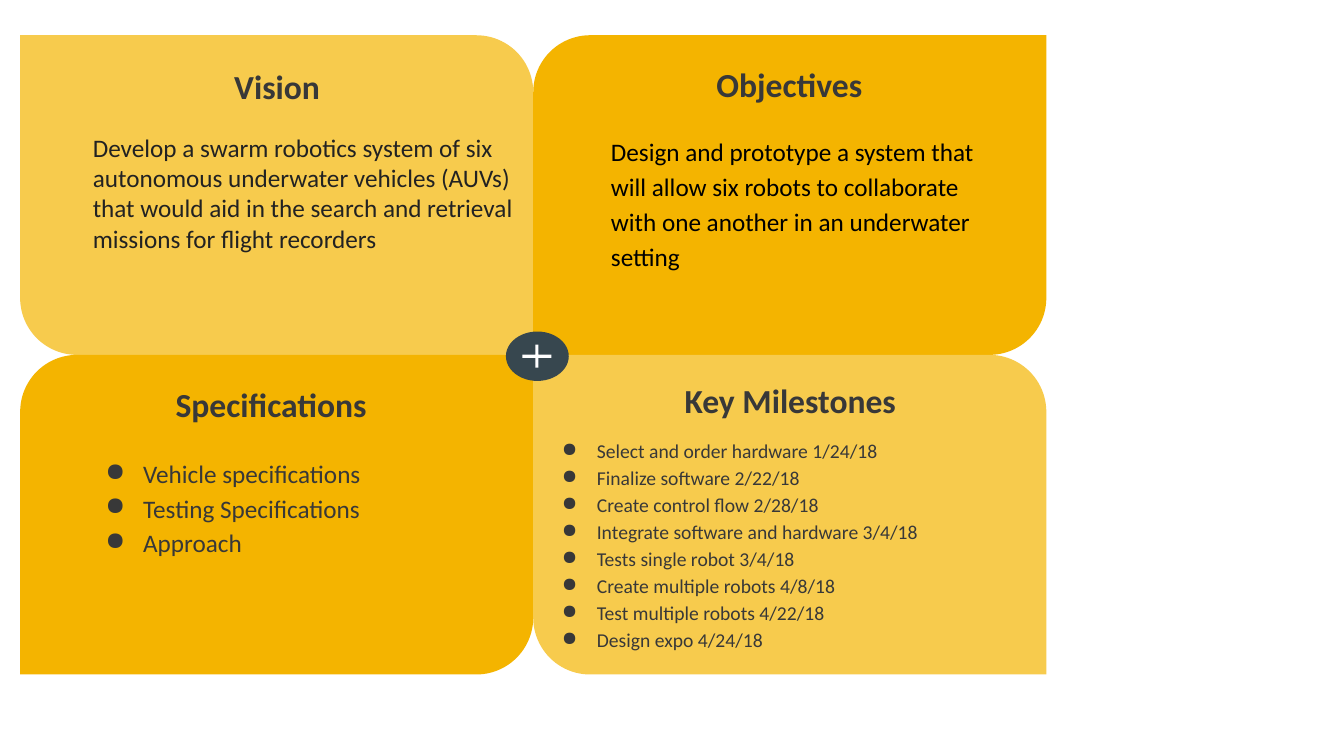
from lxml import etree
from pptx import Presentation
from pptx.dml.color import RGBColor
from pptx.enum.shapes import MSO_SHAPE
from pptx.enum.text import PP_ALIGN
from pptx.oxml.ns import qn
from pptx.util import Pt

PANEL, OVAL, PLUS = MSO_SHAPE.ROUND_2_DIAG_RECTANGLE, MSO_SHAPE.OVAL, MSO_SHAPE.MATH_PLUS
CENTER, LEFT = PP_ALIGN.CENTER, PP_ALIGN.LEFT
FONT, GREY, SLATE, WHITE = "Calibri", "383838", "37474F", "FFFFFF"
AMBER, YELLOW = "F4B400", "F7CB4D"
GRID_X, GRID_Y, PANEL_W, PANEL_H = 14.4, 25.2, 366.5, 228.3
TITLE_W, TITLE_H, INSET, ROUND = 273.6, 67, 9.4, 0.178

PANELS = [
    dict(col=0, row=0, title="Vision", title_at=(61.2, 37.4),
         box=(56.9, 85, 324, 116.6), size=18, color="222222", spacing=None, hang=0,
         lines=["Develop a swarm robotics system of six autonomous underwater vehicles (AUVs) "
                "that would aid in the search and retrieval missions for flight recorders"]),
    dict(col=1, row=0, title="Objectives", title_at=(427, 36),
         box=(427, 85, 302.4, 108.7), size=18, color="000000", spacing=1.15, hang=0,
         lines=["Design and prototype a system that will allow six robots to collaborate "
                "with one another in an underwater setting"]),
    dict(col=0, row=1, title="Specifications", title_at=(56.9, 265),
         box=(56.9, 314.6, 304.6, 167), size=18, color=GREY, spacing=1.15, hang=27,
         lines=["Vehicle specifications", "Testing Specifications", "Approach"]),
    dict(col=1, row=1, title="Key Milestones", title_at=(427.7, 262.1),
         box=(380.9, 301.7, 404.6, 155.5), size=14, color=GREY, spacing=1.15, hang=25,
         lines=["Select and order hardware 1/24/18", "Finalize software 2/22/18",
                "Create control flow 2/28/18", "Integrate software and hardware 3/4/18",
                "Tests single robot 3/4/18", "Create multiple robots 4/8/18",
                "Test multiple robots 4/22/18", "Design expo 4/24/18"]),
]
HUB = [(OVAL, (361.4, 236.8, 44.9, 35.3), SLATE, []),
       (PLUS, (369.5, 243.3, 28.1, 22.3), WHITE, [0.099])]


def rgb(hex_color):
    return RGBColor.from_string(hex_color)


def add_filled(s, kind, box, color, adjustments):
    sp = s.shapes.add_shape(kind, *map(Pt, box))
    sp.shadow.inherit = False
    sp.fill.solid()
    sp.fill.fore_color.rgb = rgb(color)
    sp.line.fill.background()
    for i, value in enumerate(adjustments):
        sp.adjustments[i] = value


def add_bullet(p, hang):
    pPr = p._p.get_or_add_pPr()
    pPr.set("marL", str(Pt(36)))
    pPr.set("indent", str(-Pt(hang)))
    color = etree.SubElement(pPr, qn("a:buClr"))
    etree.SubElement(color, qn("a:srgbClr"), val=GREY)
    etree.SubElement(pPr, qn("a:buChar"), char="●")


def add_text(s, box, lines, size, color, bold=False, align=LEFT, spacing=None, hang=0):
    tf = s.shapes.add_textbox(*map(Pt, box)).text_frame
    tf.word_wrap = True
    tf.margin_left = tf.margin_right = tf.margin_top = tf.margin_bottom = Pt(INSET)
    tf.text = "\n".join(lines)
    for p in tf.paragraphs:
        if hang:
            add_bullet(p, hang)
        p.alignment = align
        p.line_spacing = spacing
        for r in p.runs:
            r.font.name, r.font.size, r.font.bold = FONT, Pt(size), bold
            r.font.color.rgb = rgb(color)


def main():
    """Build the four-panel project overview slide."""
    prs = Presentation()
    prs.slide_width, prs.slide_height = Pt(960), Pt(540)
    s = prs.slides.add_slide(prs.slide_layouts[6])
    for panel in PANELS:
        col, row = panel["col"], panel["row"]
        on_diagonal = col == row
        box = (GRID_X + col * PANEL_W, GRID_Y + row * PANEL_H, PANEL_W, PANEL_H)
        add_filled(s, PANEL, box, YELLOW if on_diagonal else AMBER,
                   [0, ROUND] if on_diagonal else [ROUND, 0])
        add_text(s, (*panel["title_at"], TITLE_W, TITLE_H), [panel["title"]], 24, GREY,
                 bold=True, align=CENTER)
        add_text(s, panel["box"], panel["lines"], panel["size"], panel["color"],
                 spacing=panel["spacing"], hang=panel["hang"])
    for part in HUB:
        add_filled(s, *part)
    prs.save("out.pptx")


if __name__ == "__main__":
    main()
